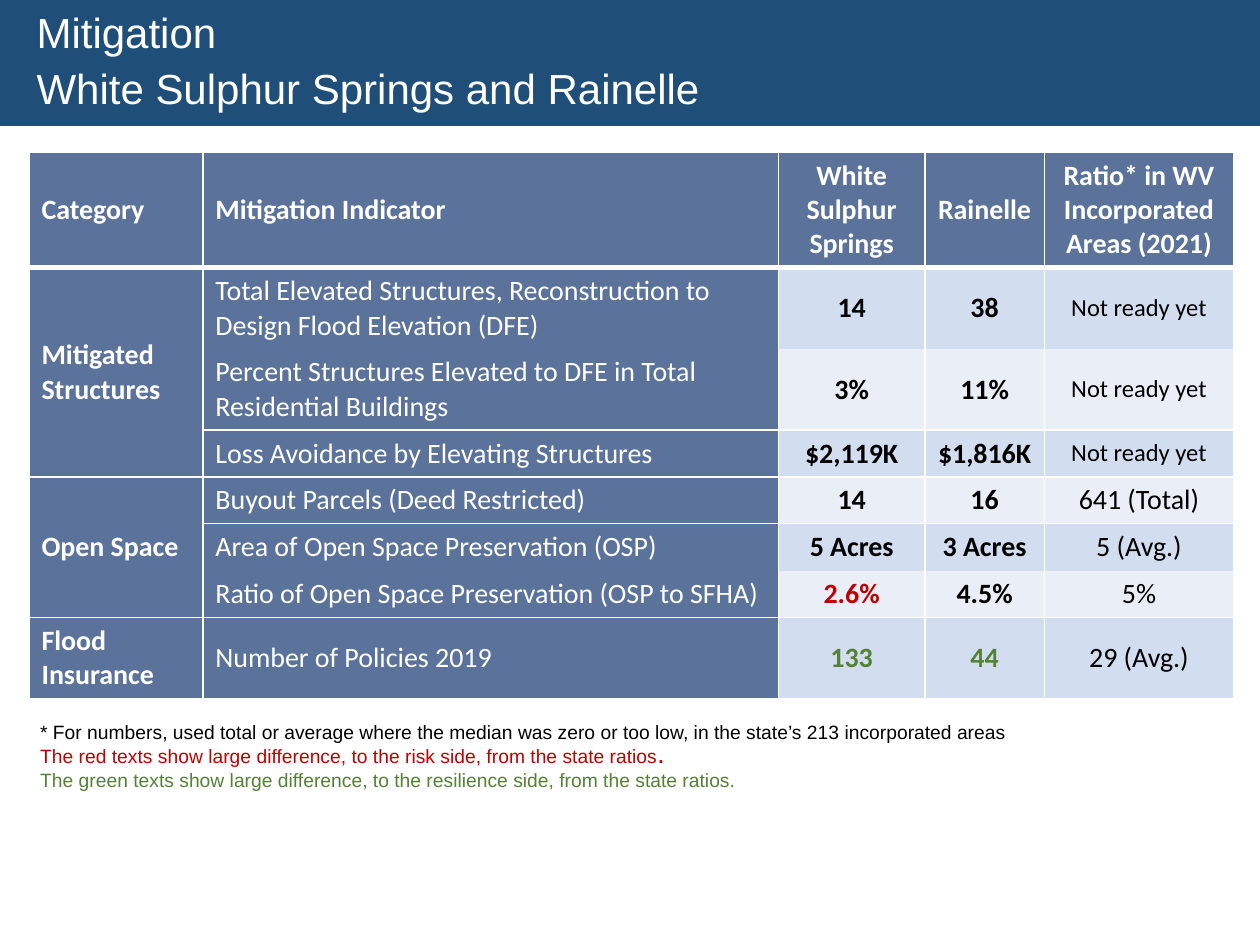
"""Build the mitigation indicator slide for two flood-prone towns."""
from lxml.etree import SubElement
from pptx import Presentation
from pptx.dml.color import RGBColor
from pptx.enum.text import MSO_ANCHOR as ANCHOR, MSO_AUTO_SIZE as AUTO, PP_ALIGN as ALIGN
from pptx.oxml.ns import qn
from pptx.util import Inches, Pt

WHITE, BLACK, RED, GREEN = "FFFFFF", "000000", "C00000", "548235"
NAVY, SLATE, BANDS = "1F4E79", "5B739B", ("EAEFF7", "D2DEEF")


def style(r, size, color, bold=False, name="Calibri"):
    r.font.size = Pt(size)
    r.font.name = name
    r.font.bold = bold
    r.font.color.rgb = RGBColor.from_string(color)


def border(cell, side, width):
    ln = SubElement(cell._tc.get_or_add_tcPr(), qn(f"a:ln{side}"), w=str(Pt(width)))
    if width:
        fill = SubElement(ln, qn("a:solidFill"))
        SubElement(fill, qn("a:srgbClr"), val=WHITE)
    else:
        SubElement(ln, qn("a:noFill"))


prs = Presentation()
prs.slide_width, prs.slide_height = Inches(10), Inches(7.5)
s = prs.slides.add_slide(prs.slide_layouts[5])

title = s.shapes.title
title.left, title.top, title.width, title.height = 0, 0, Inches(10), Inches(1)
title.fill.solid()
title.fill.fore_color.rgb = RGBColor.from_string(NAVY)
tf = title.text_frame
tf.text = "Mitigation\nWhite Sulphur Springs and Rainelle"
tf.auto_size = AUTO.NONE
tf.vertical_anchor = ANCHOR.MIDDLE
for p, gap in zip(tf.paragraphs, (0, 6)):
    p.alignment = ALIGN.LEFT
    p.line_spacing = 0.9
    p.space_before = Pt(gap)
    p._p.get_or_add_pPr().set("marL", str(Inches(0.19)))
    style(p.runs[0], 24, WHITE, name="Arial")

rows = [
    ("Category", "Mitigation Indicator", "White Sulphur Springs", "Rainelle",
     "Ratio* in WV Incorporated Areas (2021)"),
    ("Mitigated Structures",
     "Total Elevated Structures, Reconstruction to Design Flood Elevation (DFE)",
     "14", "38", "Not ready yet"),
    ("", "Percent Structures Elevated to DFE in Total Residential Buildings",
     "3%", "11%", "Not ready yet"),
    ("", "Loss Avoidance by Elevating Structures", "$2,119K", "$1,816K", "Not ready yet"),
    ("Open Space", "Buyout Parcels (Deed Restricted)", "14", "16", "641 (Total)"),
    ("", "Area of Open Space Preservation (OSP)", "5 Acres", "3 Acres", "5 (Avg.)"),
    ("", "Ratio of Open Space Preservation (OSP to SFHA)", "2.6%", "4.5%", "5%"),
    ("Flood Insurance", "Number of Policies 2019", "133", "44", "29 (Avg.)"),
]
widths = (1.38, 4.57, 1.16, 0.95, 1.5)
heights = (0.91, 0.64, 0.64, 0.37, 0.37, 0.37, 0.37, 0.64)
highlights = {"2.6%": RED, "133": GREEN, "44": GREEN}
open_below, open_above = (1, 5), (2, 6)

table = s.shapes.add_table(len(rows), len(widths), Inches(0.23), Inches(1.21),
                           Inches(sum(widths)), Inches(sum(heights))).table
for col, width in zip(table.columns, widths):
    col.width = Inches(width)
for row, height in zip(table.rows, heights):
    row.height = Inches(height)

for i, row in enumerate(rows):
    for j, text in enumerate(row):
        cell = table.cell(i, j)
        cell.vertical_anchor = ANCHOR.MIDDLE
        top = 3 if i == 1 else 0 if j and i in open_above else 1
        bottom = 3 if i == 0 else 0 if j and i in open_below else 1
        for side, width in zip("LRTB", (1, 1, top, bottom)):
            border(cell, side, width)
        label = i == 0 or j < 2
        cell.fill.solid()
        cell.fill.fore_color.rgb = RGBColor.from_string(SLATE if label else BANDS[i % 2])
        if text:
            cell.text_frame.text = text
            p = cell.text_frame.paragraphs[0]
            p.alignment = ALIGN.CENTER if j > 1 else ALIGN.LEFT
            style(p.runs[0], 14 if text == "Not ready yet" else 16,
                  WHITE if label else highlights.get(text, BLACK),
                  bold=i == 0 or j in (0, 2, 3))
for first in (1, 4):
    table.cell(first, 0).merge(table.cell(first + 2, 0))

notes = [
    (BLACK, "* For numbers, used total or average where the median was zero or too low, "
            "in the state’s 213 incorporated areas"),
    (RED, "The red texts show large difference, to the risk side, from the state ratios"),
    (GREEN, "The green texts show large difference, to the resilience side, "
            "from the state ratios."),
]
tf = s.shapes.add_textbox(Inches(0.22), Inches(5.67), Inches(9.65), Inches(0.76)).text_frame
tf.word_wrap = True
tf.text = "\n".join(text for _, text in notes)
for p, (color, _) in zip(tf.paragraphs, notes):
    p.space_before = Pt(0.5)
    style(p.runs[0], 11, color, name="Arial")
r = tf.paragraphs[1].add_run()
r.text = "."
style(r, 11, RED, bold=True, name="Arial")

prs.save("out.pptx")
